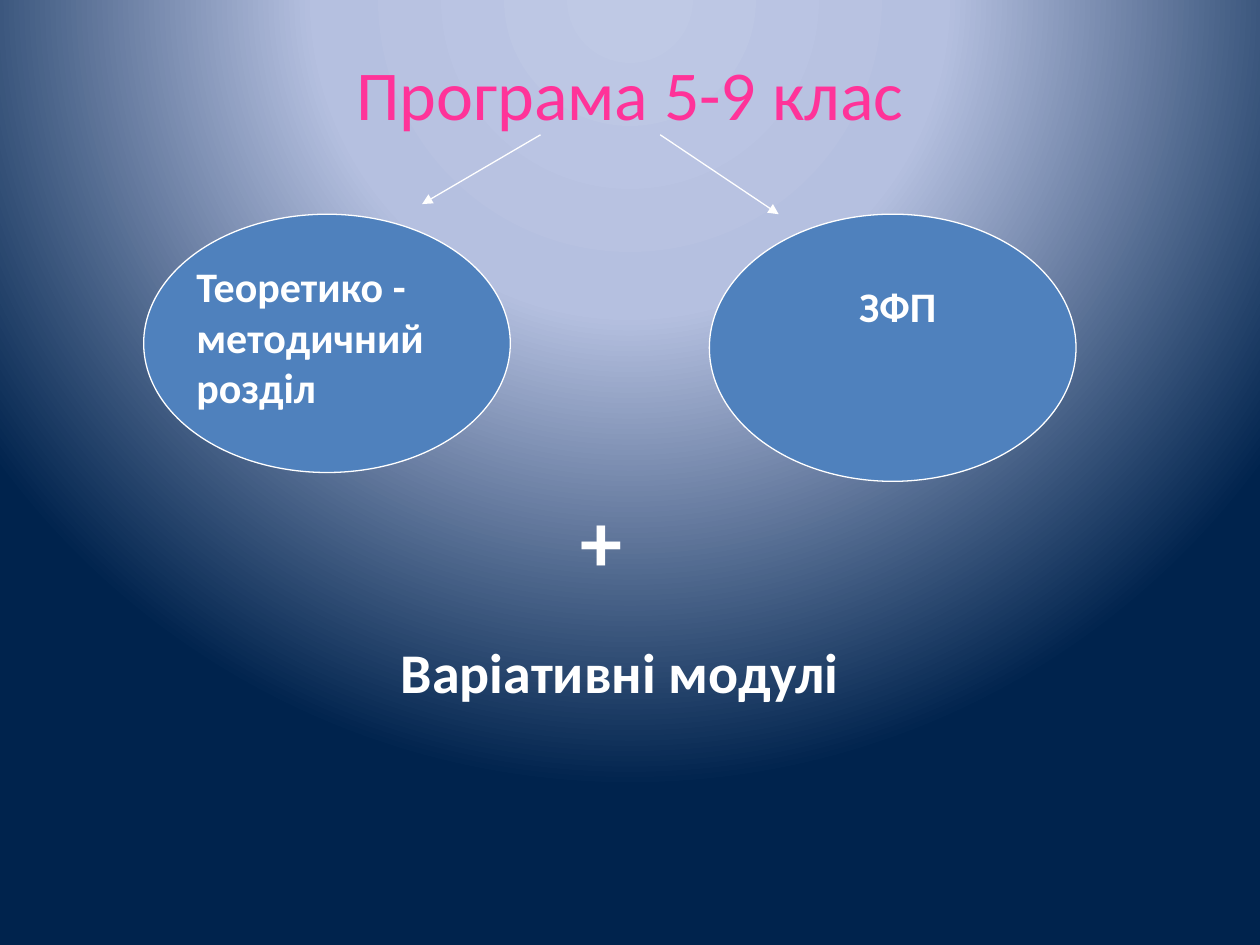
"""Build the slide on the school programme for grades 5-9."""
from dataclasses import dataclass

from lxml import etree
from pptx import Presentation
from pptx import util as u
from pptx.dml.color import RGBColor
from pptx.enum import shapes, text
from pptx.oxml import parse_xml
from pptx.oxml.ns import nsdecls, qn


@dataclass(frozen=True)
class Theme:
    """Colours, font and type sizes."""

    title: str = "FF3399"
    light: str = "FFFFFF"
    oval: str = "4F81BD"
    glow: tuple = ((0, "BFC9E5"), (40, "B5C0E0"), (100, "00234D"))
    font: str = "Calibri"
    title_size: int = 40
    label_size: int = 24
    module_size: int = 32
    plus_size: int = 48
    line_width: float = 0.75


def write(frame, words, *, size, color, font, bold=False, align=text.PP_ALIGN.CENTER,
          anchor=text.MSO_ANCHOR.TOP):
    """Put formatted words in a text frame."""
    frame.word_wrap = True
    frame.vertical_anchor = anchor
    para = frame.paragraphs[0]
    para.alignment = align
    span = para.add_run()
    span.text = words
    span.font.name = font
    span.font.size = u.Pt(size)
    span.font.bold = bold
    span.font.color.rgb = RGBColor.from_string(color)


class Painter:
    """Hold the theme and the current slide."""

    def __init__(self, page, theme):
        """Keep the page and its style."""
        self.page = page
        self.theme = theme

    def background(self):
        """Fill the page with a radial glow from above its top edge."""
        self.page.background.fill.solid()
        holder = self.page.element.find(".//" + qn("p:bgPr"))
        stops = "".join(
            f'<a:gs pos="{place * 1000}"><a:srgbClr val="{color}"/></a:gs>'
            for place, color in self.theme.glow
        )
        glow = parse_xml(
            f'<a:gradFill {nsdecls("a")} rotWithShape="1"><a:gsLst>{stops}</a:gsLst>'
            '<a:path path="circle"><a:fillToRect l="50000" t="-80000" r="50000" b="180000"/>'
            "</a:path></a:gradFill>"
        )
        holder.replace(holder.find(qn("a:solidFill")), glow)

    def outline(self, line):
        """Apply the thin light line."""
        line.color.rgb = RGBColor.from_string(self.theme.light)
        line.width = u.Pt(self.theme.line_width)

    def label(self, words, left, top, width, height, **style):
        """Add a text box."""
        box = self.page.shapes.add_textbox(*map(u.Inches, (left, top, width, height)))
        style = {"color": self.theme.light, "font": self.theme.font, "bold": True} | style
        write(box.text_frame, words, **style)

    def oval(self, left, top, width, height):
        """Add a filled ellipse."""
        oval = self.page.shapes.add_shape(
            shapes.MSO_SHAPE.OVAL, *map(u.Inches, (left, top, width, height))
        )
        oval.shadow.inherit = False
        oval.fill.solid()
        oval.fill.fore_color.rgb = RGBColor.from_string(self.theme.oval)
        self.outline(oval.line)

    def arrow(self, start, end):
        """Add a straight arrow pointing at its end."""
        arrow = self.page.shapes.add_connector(
            shapes.MSO_CONNECTOR.STRAIGHT, *map(u.Inches, (*start, *end))
        )
        self.outline(arrow.line)
        properties = arrow.element.spPr
        etree.SubElement(properties.find(qn("a:ln")), qn("a:tailEnd"), type="triangle")
        etree.SubElement(properties, qn("a:effectLst"))


def main():
    """Build and save the deck."""
    deck = Presentation()
    deck.slide_width, deck.slide_height = u.Inches(10), u.Inches(7.5)
    theme = Theme()
    painter = Painter(deck.slides.add_slide(deck.slide_layouts[6]), theme)

    painter.background()
    painter.label("Програма 5-9 клас", 0.5, 0.32, 9, 0.83, size=theme.title_size,
                  color=theme.title, bold=False, anchor=text.MSO_ANCHOR.MIDDLE)
    painter.oval(1.14, 1.7, 2.91, 2.05)
    painter.oval(5.63, 1.7, 2.91, 2.12)
    painter.label("Теоретико - методичний розділ", 1.46, 2.02, 2.44, 1.3,
                  size=theme.label_size, align=text.PP_ALIGN.LEFT)
    painter.label("ЗФП", 6.34, 2.18, 1.57, 0.5, size=theme.label_size)
    painter.arrow((4.29, 1.07), (3.35, 1.62))
    painter.arrow((5.24, 1.07), (6.18, 1.7))
    painter.label("+", 4.06, 3.83, 1.42, 0.9, size=theme.plus_size)
    painter.label("Варіативні модулі", 2.48, 5.01, 4.88, 0.63, size=theme.module_size)

    deck.save("out.pptx")


if __name__ == "__main__":
    main()
